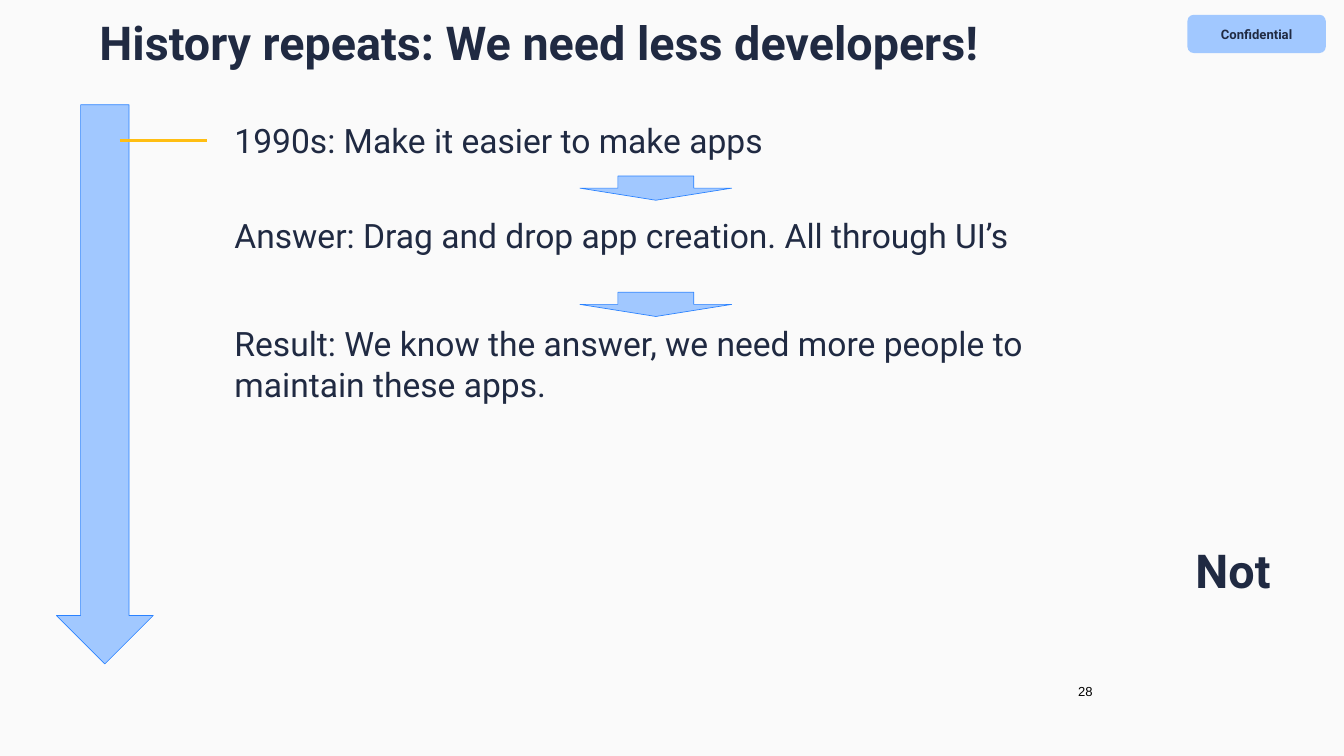
from dataclasses import dataclass

from lxml import etree
from pptx import Presentation
from pptx.dml.color import RGBColor
from pptx.enum.shapes import MSO_CONNECTOR as CONNECTOR, MSO_SHAPE as SHAPE
from pptx.enum.text import MSO_ANCHOR as ANCHOR, PP_ALIGN as ALIGN
from pptx.oxml.ns import qn
from pptx.util import Emu, Pt

EMU_PER_PX = 9144  # 100 px to the inch


@dataclass(frozen=True)
class Theme:
    background: str = "FAFAFA"
    ink: str = "202A42"
    black: str = "000000"
    sky: str = "A1C8FF"
    blue: str = "2A82FF"
    amber: str = "FFBE12"
    font: str = "Roboto"
    number_font: str = "Arial"
    title: int = 50
    body: int = 36
    small: int = 14


def px(n):
    return Emu(n * EMU_PER_PX)


def rgb(code):
    return RGBColor.from_string(code)


class SlideBuilder:
    def __init__(self, slide, theme):
        self.slide = slide
        self.theme = theme
        slide.background.fill.solid()
        slide.background.fill.fore_color.rgb = rgb(theme.background)

    def set_text(self, sp, text, size, bold=False, inset=10, align=ALIGN.LEFT,
                 anchor=ANCHOR.TOP, font=None, color=None):
        tf = sp.text_frame
        tf.word_wrap = True
        tf.vertical_anchor = anchor
        tf.margin_left = tf.margin_right = px(inset)
        tf.margin_top = tf.margin_bottom = px(inset)
        tf.text = text
        p = tf.paragraphs[0]
        p.alignment = align
        r = p.runs[0]
        r.font.name = font or self.theme.font
        r.font.size = Pt(size)
        r.font.bold = bold
        r.font.color.rgb = rgb(color or self.theme.ink)

    def text(self, box, text, size, **style):
        sp = self.slide.shapes.add_textbox(*map(px, box))
        self.set_text(sp, text, size, **style)

    def heading(self, box, text):
        self.text(box, text, self.theme.title, bold=True, inset=20)

    def shape(self, kind, box):
        sp = self.slide.shapes.add_shape(kind, *map(px, box))
        sp.shadow.inherit = False
        sp.fill.solid()
        sp.fill.fore_color.rgb = rgb(self.theme.sky)
        sp.line.fill.background()
        return sp

    def badge(self, box, text):
        sp = self.shape(SHAPE.ROUNDED_RECTANGLE, box)
        self.set_text(sp, text, self.theme.small, bold=True,
                      align=ALIGN.CENTER, anchor=ANCHOR.MIDDLE)

    def down_arrow(self, box):
        sp = self.shape(SHAPE.DOWN_ARROW, box)
        sp.line.color.rgb = rgb(self.theme.blue)
        sp.line.width = Pt(0.75)

    def tick(self, x1, x2, y):
        """Draw a horizontal marker on the timeline."""
        line = self.slide.shapes.add_connector(
            CONNECTOR.STRAIGHT, px(x1), px(y), px(x2), px(y))
        line.line.color.rgb = rgb(self.theme.amber)
        line.line.width = Pt(3)
        etree.SubElement(line._element.spPr, qn("a:effectLst"))


def main():
    prs = Presentation()
    prs.slide_width, prs.slide_height = px(2000), px(1125)
    theme = Theme()
    page = SlideBuilder(prs.slides.add_slide(prs.slide_layouts[6]), theme)

    page.badge((1767, 22, 206, 57), "Confidential")
    page.heading((128, 0, 1751, 125), "History repeats: We need less developers!")
    page.text((1516, 989, 120, 79), "28", theme.small, align=ALIGN.RIGHT,
              anchor=ANCHOR.MIDDLE, font=theme.number_font, color=theme.black)

    page.down_arrow((84, 156, 144, 832))
    page.tick(178, 308, 209)

    steps = [
        (169, 81, "1990s: Make it easier to make apps"),
        (310, 81, "Answer: Drag and drop app creation. All through UI’s"),
        (471, 141, "Result: We know the answer, we need more people to "
                   "maintain these apps."),
    ]
    for top, height, text in steps:
        page.text((339, top, 1385, height), text, theme.body)
    for top in (262, 435):
        page.down_arrow((863, top, 226, 36))

    page.heading((1759, 787, 182, 125), "Not")
    prs.save("out.pptx")


if __name__ == "__main__":
    main()
